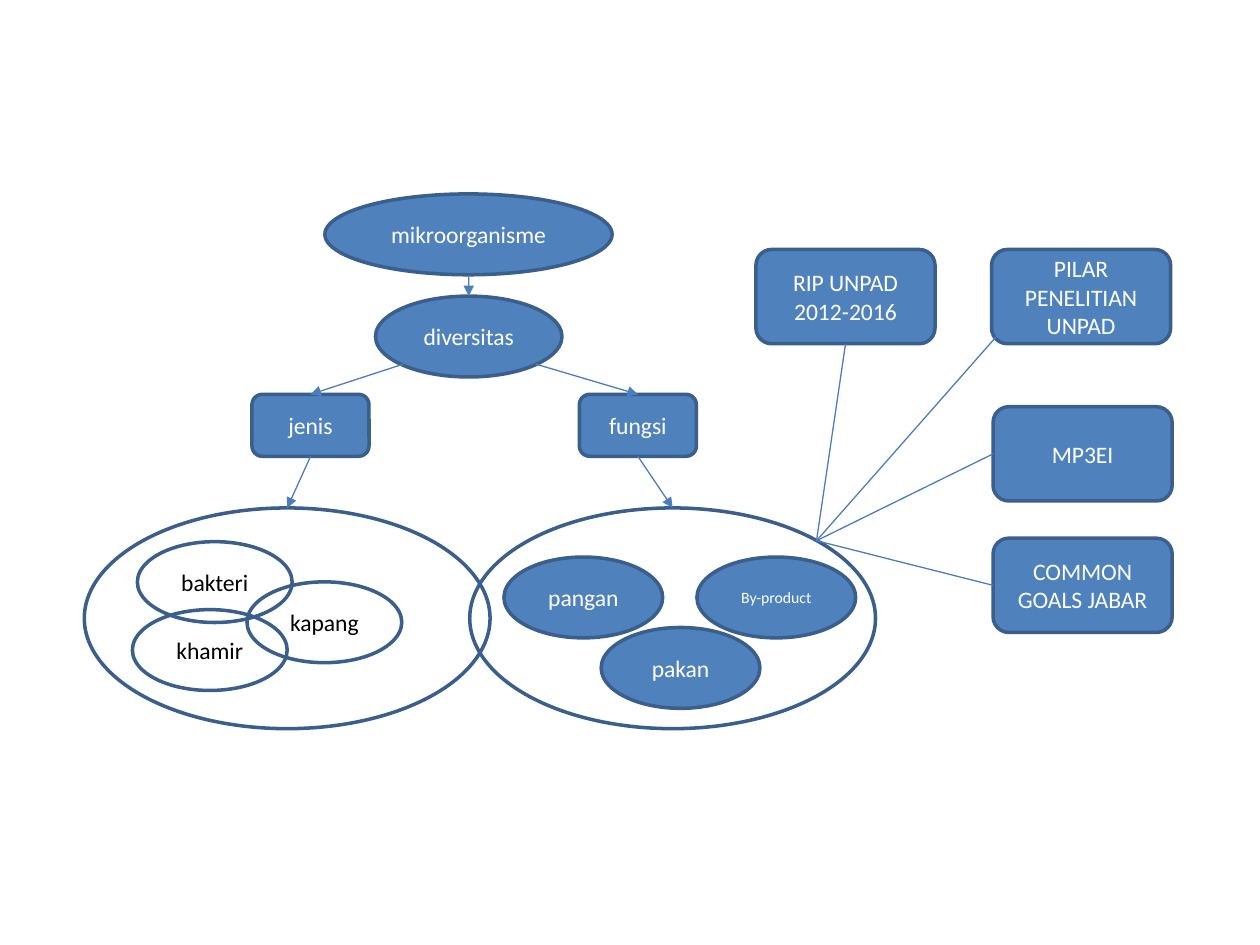
"""Builds a one-slide diagram of microorganism diversity and its research frameworks."""
from lxml import etree
from pptx import Presentation
from pptx.dml.color import RGBColor
from pptx.enum.shapes import MSO_CONNECTOR, MSO_SHAPE
from pptx.enum.text import MSO_ANCHOR, PP_ALIGN
from pptx.oxml.ns import qn
from pptx.util import Cm, Pt

OVAL = MSO_SHAPE.OVAL
ROUNDED = MSO_SHAPE.ROUNDED_RECTANGLE
STRAIGHT = MSO_CONNECTOR.STRAIGHT
MIDDLE = MSO_ANCHOR.MIDDLE
CENTER = PP_ALIGN.CENTER
TOP, LEFT, BOTTOM = 0, 1, 2

COLORS = {"fill": "4F81BD", "outline": "3A5F8C", "link": "4B7EBC",
          "light": "FFFFFF", "dark": "000000"}
OVAL_HEIGHT = 1.63
CATEGORY_SIZE = (2.36, 1.25)
FRAMEWORK_SIZE = (3.61, 1.9)
KIND_SIZE = (3.12, OVAL_HEIGHT)
USE_SIZE = (3.2, OVAL_HEIGHT)
DOMAIN_SIZE = (8.18, 4.45)


def color(name):
    return RGBColor.from_string(COLORS[name])


def add_node(slide, outline, position, size, label="", filled=True, points=13.5):
    """Add an outlined oval or rounded box with a centred label."""
    node = slide.shapes.add_shape(outline, *map(Cm, position + size))
    node.shadow.inherit = False
    if filled:
        node.fill.solid()
        node.fill.fore_color.rgb = color("fill")
    else:
        node.fill.background()
    node.line.color.rgb = color("outline")
    node.line.width = Pt(2)
    if label:
        frame = node.text_frame
        frame.word_wrap = True
        frame.vertical_anchor = MIDDLE
        frame.margin_left = frame.margin_right = Cm(0.18)
        frame.margin_top = frame.margin_bottom = Cm(0.1)
        paragraph = frame.paragraphs[0]
        paragraph.text = label
        paragraph.alignment = CENTER
        paragraph.font.name = "Calibri"
        paragraph.font.size = Pt(points)
        paragraph.font.color.rgb = color("light" if filled else "dark")
    return node


def add_link(slide, start, end, arrow=False, start_joint=None, end_joint=None):
    """Draw a line between two points, joined to (node, side) where given."""
    link = slide.shapes.add_connector(STRAIGHT, *map(Cm, start + end))
    if start_joint:
        link.begin_connect(*start_joint)
    if end_joint:
        link.end_connect(*end_joint)
    link.line.color.rgb = color("link")
    link.line.width = Pt(0.75)
    if arrow:
        etree.SubElement(link.line._get_or_add_ln(), qn("a:tailEnd"), type="triangle")
    etree.SubElement(link._element.spPr, qn("a:effectLst"))


def add_diversity(slide):
    """Add the hierarchy from microorganisms down to kinds and functions."""
    add_node(slide, OVAL, (6.55, 3.91), (5.79, OVAL_HEIGHT), "mikroorganisme")
    diversity = add_node(slide, OVAL, (7.57, 5.97), (3.76, OVAL_HEIGHT), "diversitas")
    kinds = add_node(slide, ROUNDED, (5.08, 7.95), CATEGORY_SIZE, "jenis")
    functions = add_node(slide, ROUNDED, (11.68, 7.95), CATEGORY_SIZE, "fungsi")

    for label, position in (("bakteri", (2.77, 10.92)), ("khamir", (2.67, 12.29)),
                            ("kapang", (4.98, 11.73))):
        add_node(slide, OVAL, position, KIND_SIZE, label, filled=False)
    for label, position, points in (("pangan", (10.16, 11.23), 13.5),
                                    ("pakan", (12.12, 12.65), 13.5),
                                    ("By-product", (14.05, 11.23), 9)):
        add_node(slide, OVAL, position, USE_SIZE, label, points=points)
    kind_domain, function_domain = [
        add_node(slide, OVAL, (left, 10.24), DOMAIN_SIZE, filled=False)
        for left in (1.7, 9.47)]

    add_link(slide, (9.45, 5.54), (9.45, 5.97), True, end_joint=(diversity, TOP))
    for start, category, domain in (((8.13, 7.34), kinds, kind_domain),
                                    ((10.8, 7.34), functions, function_domain)):
        add_link(slide, start, start, True, end_joint=(category, TOP))
        add_link(slide, start, start, True, (category, BOTTOM), (domain, TOP))


def add_frameworks(slide):
    """Add the research framework boxes, all linked to the function domain."""
    focus = (16.46, 10.9)
    corner = (20.09, 6.78)
    for label, position, side in (("RIP UNPAD 2012-2016", (15.24, 5.03), BOTTOM),
                                  ("PILAR PENELITIAN UNPAD", (19.99, 5.03), None),
                                  ("MP3EI", (20.02, 8.2), LEFT),
                                  ("COMMON GOALS JABAR", (20.02, 10.85), LEFT)):
        framework = add_node(slide, ROUNDED, position, FRAMEWORK_SIZE, label)
        joint = None if side is None else (framework, side)
        add_link(slide, corner, focus, start_joint=joint)


def main():
    presentation = Presentation()
    presentation.slide_width, presentation.slide_height = Cm(25.4), Cm(19.05)
    slide = presentation.slides.add_slide(presentation.slide_layouts[6])
    add_diversity(slide)
    add_frameworks(slide)
    presentation.save("out.pptx")


if __name__ == "__main__":
    main()
